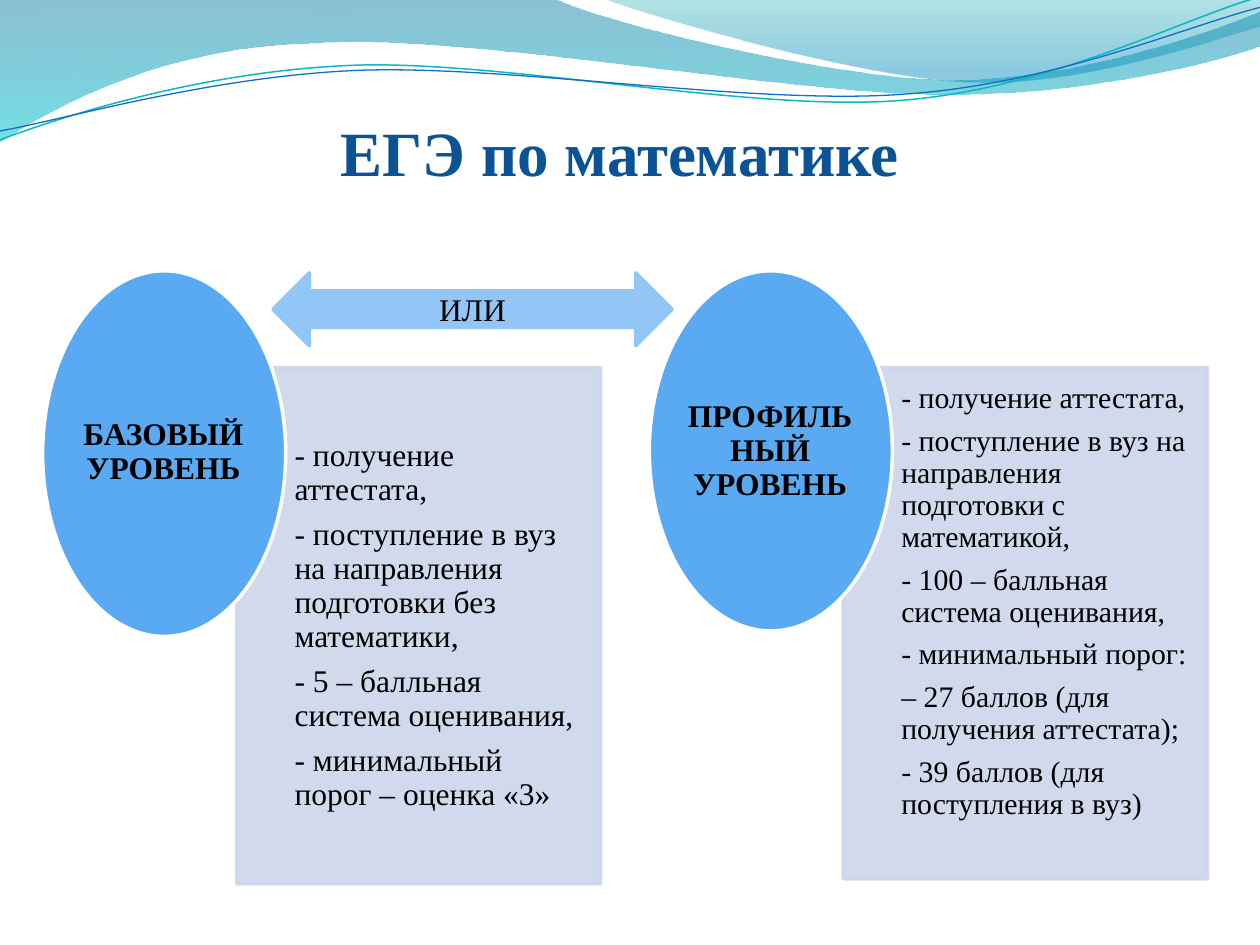
from lxml import etree
from pptx import Presentation
from pptx import util as u
from pptx.dml import color
from pptx.enum import shapes, text
from pptx.oxml import ns

FONT = "Times New Roman"
COLORS = {
    "title": "0B5394", "text": "000000", "panel": "CCD5EA", "oval": "59AAF2",
    "rim": "FFFFFF", "arrow": "91C6F7", "teal": "0AB8BF", "blue": "0F6FC6",
    "wave_top": "0074A1", "wave_end": "00C6CF", "crest_top": "00A1A9", "crest_end": "008BBF",
}
WAVES = [
    ([(0, 0), (11.18, -0.03), (12.09, 0.43, 16.87, 1.6, 19.25, 1.6),
      (21.67, 1.6, 24.33, 0.66, 25.4, 0.23), (25.43, 0.91),
      (24.97, 1.12, 22.1, 1.93, 18.95, 1.9), (15.8, 1.9, 9.7, 0.71, 6.53, 0.86),
      (3.28, 0.91, 1.17, 2.11, -0.03, 2.87), (0, 0)],
     [(0, "wave_top", 45), (1, "wave_end", 55)]),
    ([(12.17, -0.03), (12.93, 0.28, 17.32, 1.57, 19.53, 1.65),
      (21.74, 1.75, 24.41, 0.81, 25.4, 0.53), (25.4, 0), (12.17, -0.03)],
     [(0, "crest_top", 30), (0.8, "crest_end", 45)]),
]
STRANDS = [
    ([(0, 2.82), (1.22, 2.36, 4.01, 1.45, 7.04, 1.32),
      (10.03, 1.19, 15.06, 2.26, 18.11, 2.03), (21.16, 1.8, 23.83, 0.38, 25.35, -0.05)],
     "teal", 0.85),
    ([(0, 2.64), (1.19, 2.44, 4.17, 1.55, 7.19, 1.42),
      (10.24, 1.3, 15.16, 2.13, 18.21, 1.9), (21.23, 1.7, 23.9, 0.53, 25.4, 0.15)],
     "blue", 0.75),
]
LEVELS = [
    {"name": "БАЗОВЫЙ УРОВЕНЬ", "size": 18, "panel_h": 10.41, "oval_h": 7.37,
     "name_h": 5.21, "inset": 0.36, "bottom": 0.36,
     "points": ["- получение аттестата,",
                "- поступление в вуз на направления подготовки без математики,",
                "- 5 – балльная система оценивания,",
                "- минимальный порог – оценка «3»"]},
    {"name": "ПРОФИЛЬНЫЙ УРОВЕНЬ", "size": 17, "panel_h": 10.31, "oval_h": 7.26,
     "name_h": 5.16, "inset": 0.33, "bottom": 1.19,
     "points": ["- получение аттестата,",
                "- поступление в вуз на направления подготовки с математикой,",
                "- 100 – балльная система оценивания,",
                "- минимальный порог:",
                "– 27 баллов (для получения аттестата);",
                "- 39 баллов (для поступления в вуз)"]},
]
LEVEL_STEP = 12.23


def rgb(name):
    """Return the named colour."""
    return color.RGBColor.from_string(COLORS[name])


def set_alpha(parent, percent):
    """Set the opacity of every colour inside an XML element."""
    for clr in parent.iter(ns.qn("a:srgbClr")):
        etree.SubElement(clr, ns.qn("a:alpha"), val=str(percent * 1000))


def add_curve(s, segments, closed):
    """Draw a freeform of lines (two numbers) and cubic curves (six numbers)."""
    points = [tuple(map(u.Cm, seg[i:i + 2])) for seg in segments for i in range(0, len(seg), 2)]
    builder = s.shapes.build_freeform(*points[0])
    builder.add_line_segments(points[1:], close=closed)
    sp = builder.convert_to_shape()
    sp.shadow.inherit = False
    lines = iter(list(sp._element.iter(ns.qn("a:lnTo"))))
    for seg in segments[1:]:
        line = next(lines)
        if len(seg) == 6:
            curve = etree.Element(ns.qn("a:cubicBezTo"))
            line.addprevious(curve)
            for part in (line, next(lines), next(lines)):
                curve.append(part[0])
                part.getparent().remove(part)
    return sp


def add_wave(s, segments, stops):
    """Draw a filled wave with a translucent vertical gradient."""
    sp = add_curve(s, segments, True)
    sp.line.fill.background()
    sp.fill.gradient()
    sp.fill.gradient_angle = 270
    for stop, (position, name, opacity) in zip(sp.fill.gradient_stops, stops):
        stop.position = position
        stop.color.rgb = rgb(name)
        set_alpha(stop.color._xFill, opacity)


def add_strand(s, segments, name, width):
    """Draw a thin curved line."""
    sp = add_curve(s, segments, False)
    sp.fill.background()
    sp.line.color.rgb = rgb(name)
    sp.line.width = u.Pt(width)


def write(sp, lines, size, align, margins, bold=False, name="text",
          anchor=text.MSO_ANCHOR.MIDDLE, spacing=None):
    """Fill a shape with formatted paragraphs; margins run left, top, right, bottom."""
    tf = sp.text_frame
    sides = ("margin_left", "margin_top", "margin_right", "margin_bottom")
    frame = dict(zip(sides, map(u.Cm, margins)), word_wrap=True,
                 auto_size=text.MSO_AUTO_SIZE.NONE, vertical_anchor=anchor)
    for key, value in frame.items():
        setattr(tf, key, value)
    for i, line in enumerate(lines):
        p = tf.add_paragraph() if i else tf.paragraphs[0]
        p.alignment = align
        if spacing:
            p.line_spacing = spacing
            p.space_after = u.Pt(0.35 * size)
        r = p.add_run()
        r.text = line
        for key, value in {"name": FONT, "size": u.Pt(size), "bold": bold}.items():
            setattr(r.font, key, value)
        r.font.color.rgb = rgb(name)


def add_block(s, kind, box, fill, line):
    """Draw a preset shape with a plain fill and a 2 pt outline."""
    sp = s.shapes.add_shape(kind, *map(u.Cm, box))
    sp.shadow.inherit = False
    sp.fill.solid()
    sp.fill.fore_color.rgb = rgb(fill)
    sp.line.color.rgb = rgb(line)
    sp.line.width = u.Pt(2)
    return sp


def add_label(s, box, *args, **options):
    """Add a text box with spaced paragraphs."""
    write(s.shapes.add_textbox(*map(u.Cm, box)), *args, spacing=0.9, **options)


def add_level(s, level, x):
    """Draw an exam level: a panel of points and an oval with its name."""
    panel = add_block(s, shapes.MSO_SHAPE.RECTANGLE,
                      (x + 3.91, 7.41, 7.34, level["panel_h"]), "panel", "panel")
    set_alpha(panel._element.spPr, 90)
    inset = level["inset"]
    add_label(s, (x + 5.08, 7.41, 6.17, level["panel_h"]), level["points"], level["size"],
              text.PP_ALIGN.LEFT, (0, inset, inset, level["bottom"]))
    add_block(s, shapes.MSO_SHAPE.OVAL, (x, 5.46, 4.9, level["oval_h"]), "oval", "rim")
    add_label(s, (x + 0.71, 6.52, 3.45, level["name_h"]), [level["name"]], 18,
              text.PP_ALIGN.CENTER, (0, 0, 0, 0), bold=True)


def add_title(s, title):
    """Place and format the title."""
    sp = s.shapes.title
    box = {"left": 1.06, "top": 2.34, "width": 22.86, "height": 1.47}
    for key, value in box.items():
        setattr(sp, key, u.Cm(value))
    write(sp, [title], 36, text.PP_ALIGN.CENTER, (0, 0.13, 0, 0), bold=True,
          name="title", anchor=text.MSO_ANCHOR.BOTTOM)


def main():
    """Build the slide and save it."""
    prs = Presentation()
    prs.slide_width, prs.slide_height = u.Cm(25.4), u.Cm(19.05)
    s = prs.slides.add_slide(prs.slide_layouts[5])
    for wave in WAVES:
        add_wave(s, *wave)
    for strand in STRANDS:
        add_strand(s, *strand)
    add_title(s, "ЕГЭ по математике")
    for i, level in enumerate(LEVELS):
        add_level(s, level, 0.86 + i * LEVEL_STEP)
    arrow = add_block(s, shapes.MSO_SHAPE.LEFT_RIGHT_ARROW, (5.5, 5.5, 8.05, 1.47),
                      "arrow", "arrow")
    write(arrow, ["ИЛИ"], 18, text.PP_ALIGN.CENTER, (0.25, 0.13, 0.25, 0.13))
    prs.save("out.pptx")


if __name__ == "__main__":
    main()
